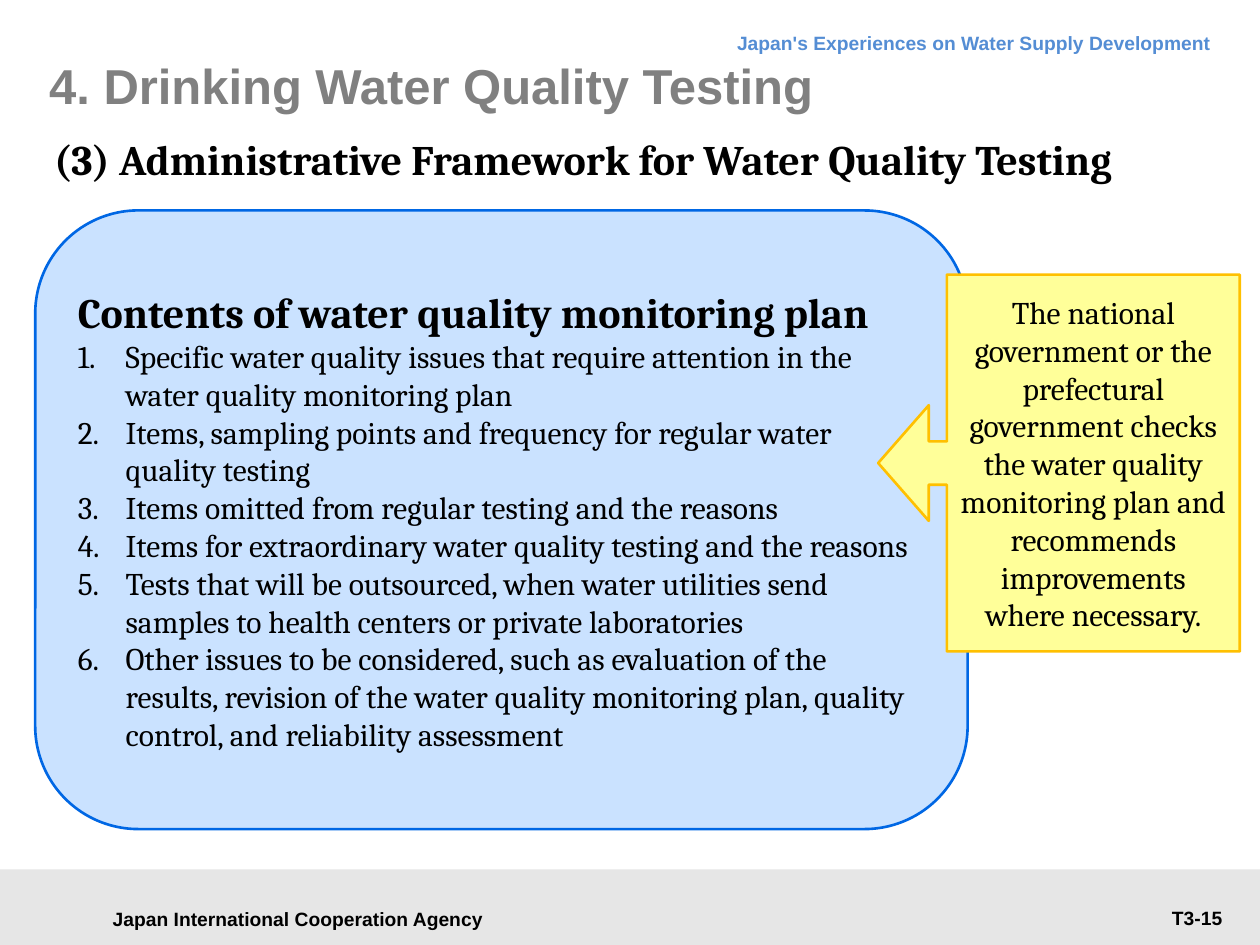
from lxml import etree
from pptx import Presentation
from pptx.dml.color import RGBColor
from pptx.enum.shapes import MSO_SHAPE
from pptx.enum.text import MSO_ANCHOR, PP_ALIGN
from pptx.oxml.ns import qn
from pptx.util import Inches, Pt

RECT = MSO_SHAPE.RECTANGLE
ROUNDED = MSO_SHAPE.ROUNDED_RECTANGLE
CALLOUT = MSO_SHAPE.LEFT_ARROW_CALLOUT
TOP, MIDDLE = MSO_ANCHOR.TOP, MSO_ANCHOR.MIDDLE
LEFT, CENTER, RIGHT = PP_ALIGN.LEFT, PP_ALIGN.CENTER, PP_ALIGN.RIGHT

BLACK = RGBColor(0x00, 0x00, 0x00)
GRAY = RGBColor(0x80, 0x80, 0x80)
FOOTER_GRAY = RGBColor(0xE6, 0xE6, 0xE6)
HEADER_BLUE = RGBColor(0x54, 0x8D, 0xD4)
PANEL_FILL = RGBColor(0xCA, 0xE2, 0xFF)
PANEL_LINE = RGBColor(0x00, 0x67, 0xE4)
NOTE_FILL = RGBColor(0xFF, 0xFF, 0x99)
NOTE_LINE = RGBColor(0xFF, 0xC0, 0x00)

SANS, SERIF = "Arial", "Cambria"

PLAN_CONTENTS = [
    "Specific water quality issues that require attention in the water quality monitoring plan",
    "Items, sampling points and frequency for regular water quality testing",
    "Items omitted from regular testing and the reasons",
    "Items for extraordinary water quality testing and the reasons",
    "Tests that will be outsourced, when water utilities send samples to health centers "
    "or private laboratories",
    "Other issues to be considered, such as evaluation of the results, revision of the water "
    "quality monitoring plan, quality control, and reliability assessment",
]
NOTE = ("The national government or the prefectural government checks the water quality "
        "monitoring plan and recommends improvements where necessary.")


class SlideBuilder:
    """Holds the current slide and draws its elements in one style."""

    def __init__(self, slide):
        self.shapes = slide.shapes

    def frame(self, sp, anchor, insets=None):
        tf = sp.text_frame
        tf.word_wrap = True
        tf.vertical_anchor = anchor
        if insets:
            (tf.margin_left, tf.margin_top,
             tf.margin_right, tf.margin_bottom) = map(Inches, insets)
        return tf

    def shape(self, kind, box, fill, line=None, adjustments=()):
        sp = self.shapes.add_shape(kind, *map(Inches, box))
        sp.shadow.inherit = False
        sp.fill.solid()
        sp.fill.fore_color.rgb = fill
        if line is None:
            sp.line.fill.background()
        else:
            sp.line.color.rgb = line
            sp.line.width = Pt(1.5)
        for i, value in enumerate(adjustments):
            sp.adjustments[i] = value
        return self.frame(sp, MIDDLE)

    def text(self, box, text, size, font=SANS, color=BLACK, align=LEFT,
             anchor=TOP, insets=None, spacing=None):
        sp = self.shapes.add_textbox(*map(Inches, box))
        tf = self.frame(sp, anchor, insets)
        p = self.run(tf.paragraphs[0], text, size, font, color, True, align)
        if spacing:
            p.line_spacing = Pt(spacing)

    def run(self, p, text, size, font=SERIF, color=BLACK, bold=False, align=LEFT):
        p.alignment = align
        r = p.add_run()
        r.text = text
        r.font.size = Pt(size)
        r.font.name = font
        r.font.bold = bold
        r.font.color.rgb = color
        return p

    def numbered(self, tf, items, size, indent):
        for item in items:
            p = tf.add_paragraph()
            pPr = p._p.get_or_add_pPr()
            pPr.set("marL", str(Inches(indent)))
            pPr.set("indent", str(-Inches(indent)))
            etree.SubElement(pPr, qn("a:buFont"), typeface="+mj-lt")
            etree.SubElement(pPr, qn("a:buAutoNum"), type="arabicPeriod")
            self.run(p, item, size)


def main():
    prs = Presentation()
    prs.slide_width, prs.slide_height = Inches(10), Inches(7.5)
    s = SlideBuilder(prs.slides.add_slide(prs.slide_layouts[6]))

    # Footer band and running header
    s.shape(RECT, (0, 6.9, 10, 0.6), FOOTER_GRAY)
    s.text((0.71, 7.12, 3.31, 0.34), "Japan International Cooperation Agency", 11,
           align=CENTER, anchor=MIDDLE)
    s.text((2.72, 0.13, 6.99, 0.38), "Japan's Experiences on Water Supply Development", 11,
           color=HEADER_BLUE, align=RIGHT, spacing=18)
    s.text((8.23, 7.14, 1.57, 0.29), "T3-15", 11, align=RIGHT)

    # Title and section heading
    s.text((0.39, 0.28, 8.98, 0.79), "4. Drinking Water Quality Testing", 28,
           color=GRAY, anchor=MIDDLE, insets=(0, 0, 0, 0))
    s.text((0.39, 1.06, 9.45, 0.61), "(3) Administrative Framework for Water Quality Testing",
           24, font=SERIF, insets=(0.04, 0, 0, 0))

    # Monitoring plan panel
    tf = s.shape(ROUNDED, (0.28, 1.67, 7.4, 4.91), PANEL_FILL, PANEL_LINE)
    s.run(tf.paragraphs[0], "Contents of water quality monitoring plan", 24, bold=True)
    s.numbered(tf, PLAN_CONTENTS, 18, indent=0.38)

    # Government check callout
    tf = s.shape(CALLOUT, (6.97, 2.18, 2.87, 2.99), NOTE_FILL, NOTE_LINE,
                 adjustments=(0.12, 0.16, 0.14, 0.81))
    s.run(tf.paragraphs[0], NOTE, 18, align=CENTER)

    prs.save("out.pptx")


if __name__ == "__main__":
    main()
